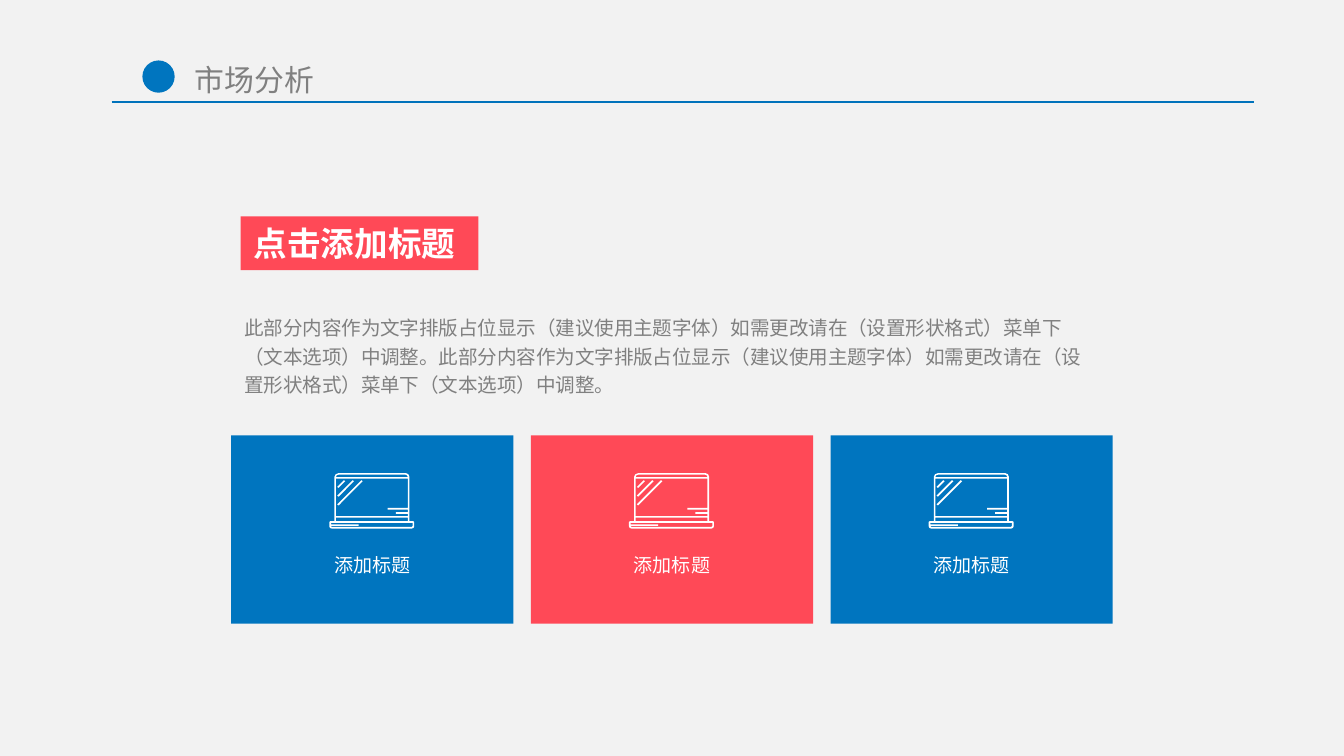
from dataclasses import dataclass

from lxml import etree
from pptx import Presentation
from pptx.dml.color import RGBColor
from pptx.enum.shapes import MSO_CONNECTOR, MSO_SHAPE
from pptx.enum.text import MSO_ANCHOR, MSO_AUTO_SIZE, PP_ALIGN
from pptx.oxml.ns import qn
from pptx.util import Inches, Pt

STRAIGHT = MSO_CONNECTOR.STRAIGHT
RECTANGLE, OVAL = MSO_SHAPE.RECTANGLE, MSO_SHAPE.OVAL
TOP, BOTTOM = MSO_ANCHOR.TOP, MSO_ANCHOR.BOTTOM
GROW = MSO_AUTO_SIZE.SHAPE_TO_FIT_TEXT
LEFT, CENTER = PP_ALIGN.LEFT, PP_ALIGN.CENTER

BLUE, RED, GREY, WHITE = "0075BF", "FF4957", "808080", "FFFFFF"
LINE_BLUE, BACKGROUND = "0072BB", "F2F2F2"
SLIDE_WIDTH = Inches(10)
CARD_LEFT, CARD_TOP, CARD_WIDTH, CARD_HEIGHT, CARD_STEP = 1.72, 3.24, 2.1, 1.4, 2.23
ICON_DX, ICON_DY = 0.73, 0.28
SENTENCE = "此部分内容作为文字排版占位显示（建议使用主题字体）如需更改请在（设置形状格式）菜单下（文本选项）中调整。"


@dataclass
class Box:
    """A rectangle in inches."""
    left: float
    top: float
    width: float
    height: float

    def lengths(self) -> tuple:
        """Return the four measures as lengths."""
        return tuple(Inches(v) for v in (self.left, self.top, self.width, self.height))


@dataclass
class TextStyle:
    """The look of one paragraph."""
    size: float
    color: str
    font: str = "Arial"
    bold: bool = False
    align: PP_ALIGN = LEFT
    spacing: float = 1.0


@dataclass
class Card:
    """A coloured tile with a caption."""
    caption: str
    color: str


def stripe(x: int, y: int, length: int) -> list:
    """Return a diagonal glare stripe falling left from its upper end."""
    return [(x, y), (x + 10, y + 8), (x + 10 - length, y + 8 + length), (x - length, y + length)]


LAPTOP = [
    [(70, 0), (570, 0), (589, 9), (597, 28), (597, 358), (625, 358), (632, 364),
     (632, 396), (627, 408), (613, 413), (19, 413), (5, 408), (0, 396), (0, 364),
     (7, 358), (38, 358), (38, 28), (48, 9)],
    [(70, 12), (55, 17), (50, 30), (584, 30), (579, 17), (566, 12)],
    [(50, 42), (50, 320), (584, 320), (584, 303), (495, 303), (495, 290), (584, 290),
     (584, 272), (435, 272), (435, 259), (584, 259), (584, 42)],
    [(50, 332), (50, 358), (584, 358), (584, 332)],
    [(13, 370), (13, 382), (218, 382), (218, 394), (13, 394), (19, 401), (613, 401),
     (620, 394), (620, 370)],
    stripe(109, 53, 50),
    stripe(174, 53, 115),
    stripe(239, 53, 180),
]


def rgb(color: str) -> RGBColor:
    """Turn a hex string into a colour."""
    return RGBColor.from_string(color)


def paint(shape, color: str) -> None:
    """Give a shape a flat fill without outline or shadow."""
    shape.shadow.inherit = False
    shape.fill.solid()
    shape.fill.fore_color.rgb = rgb(color)
    shape.line.fill.background()


def write(frame, text: str, style: TextStyle) -> None:
    """Put one styled paragraph into a text frame."""
    frame.word_wrap = True
    paragraph = frame.paragraphs[0]
    paragraph.text = text
    paragraph.alignment = style.align
    paragraph.line_spacing = style.spacing
    paragraph.font.size = Pt(style.size)
    paragraph.font.name = style.font
    paragraph.font.bold = style.bold
    paragraph.font.color.rgb = rgb(style.color)


def add_block(shapes, box: Box, color: str, preset=RECTANGLE):
    """Draw a flat preset shape."""
    block = shapes.add_shape(preset, *box.lengths())
    paint(block, color)
    return block


def add_text(shapes, box: Box, text: str, style: TextStyle):
    """Draw a growing text box and return its frame."""
    frame = shapes.add_textbox(*box.lengths()).text_frame
    write(frame, text, style)
    frame.auto_size = GROW
    return frame


def add_rule(shapes, left: float, right: float, y: float) -> None:
    """Draw the thin line below the slide title."""
    rule = shapes.add_connector(STRAIGHT, Inches(left), Inches(y), Inches(right), Inches(y))
    rule.line.width = Pt(0.75)
    rule.line.fill.solid()
    rule.line.fill.fore_color.rgb = rgb(LINE_BLUE)
    etree.SubElement(rule._element.spPr, qn("a:effectLst"))
    rule._element.remove(rule._element.find(qn("p:style")))


def add_laptop(shapes, left: float, top: float) -> None:
    """Draw the laptop icon as one outline with cut-out areas."""
    first, *others = LAPTOP
    builder = shapes.build_freeform(*first[0], scale=Inches(1) / 1000)
    builder.add_line_segments(first[1:], close=True)
    for contour in others:
        builder.move_to(*contour[0])
        builder.add_line_segments(contour[1:], close=True)
    paint(builder.convert_to_shape(Inches(left), Inches(top)), WHITE)


def add_card(shapes, card: Card, left: float) -> None:
    """Draw one grouped tile with its icon and caption."""
    group = shapes.add_group_shape().shapes
    tile = add_block(group, Box(left, CARD_TOP, CARD_WIDTH, CARD_HEIGHT), card.color)
    frame = tile.text_frame
    frame.vertical_anchor = BOTTOM
    frame.margin_bottom = Inches(0.35)
    write(frame, card.caption, TextStyle(10.2, WHITE, align=CENTER))
    add_laptop(group, left + ICON_DX, CARD_TOP + ICON_DY)


def main() -> None:
    """Build the market analysis slide."""
    deck = Presentation()
    deck.slide_width, deck.slide_height = SLIDE_WIDTH, SLIDE_WIDTH * 9 // 16
    slide = deck.slides.add_slide(deck.slide_layouts[6])
    slide.background.fill.solid()
    slide.background.fill.fore_color.rgb = rgb(BACKGROUND)
    shapes = slide.shapes

    title = add_text(shapes, Box(1.38, 0.42, 1.96, 0.34), "市场分析",
                     TextStyle(16, GREY, font="Noto Sans CJK SC"))
    title.margin_left = title.margin_right = Inches(0.07)
    title.margin_top = title.margin_bottom = Inches(0.04)
    add_rule(shapes, 0.83, 9.33, 0.76)
    add_block(shapes, Box(1.06, 0.45, 0.24, 0.24), BLUE, OVAL)

    add_text(shapes, Box(1.72, 2.27, 6.57, 0.74), SENTENCE * 2,
             TextStyle(10.5, GREY, spacing=1.2))
    for index, color in enumerate((BLUE, RED, BLUE)):
        add_card(shapes, Card("添加标题", color), CARD_LEFT + index * CARD_STEP)

    heading = add_block(shapes, Box(1.79, 1.61, 1.77, 0.4), RED).text_frame
    heading.vertical_anchor = TOP
    heading.auto_size = GROW
    write(heading, "点击添加标题", TextStyle(18, WHITE, bold=True))

    deck.save("out.pptx")


if __name__ == "__main__":
    main()
